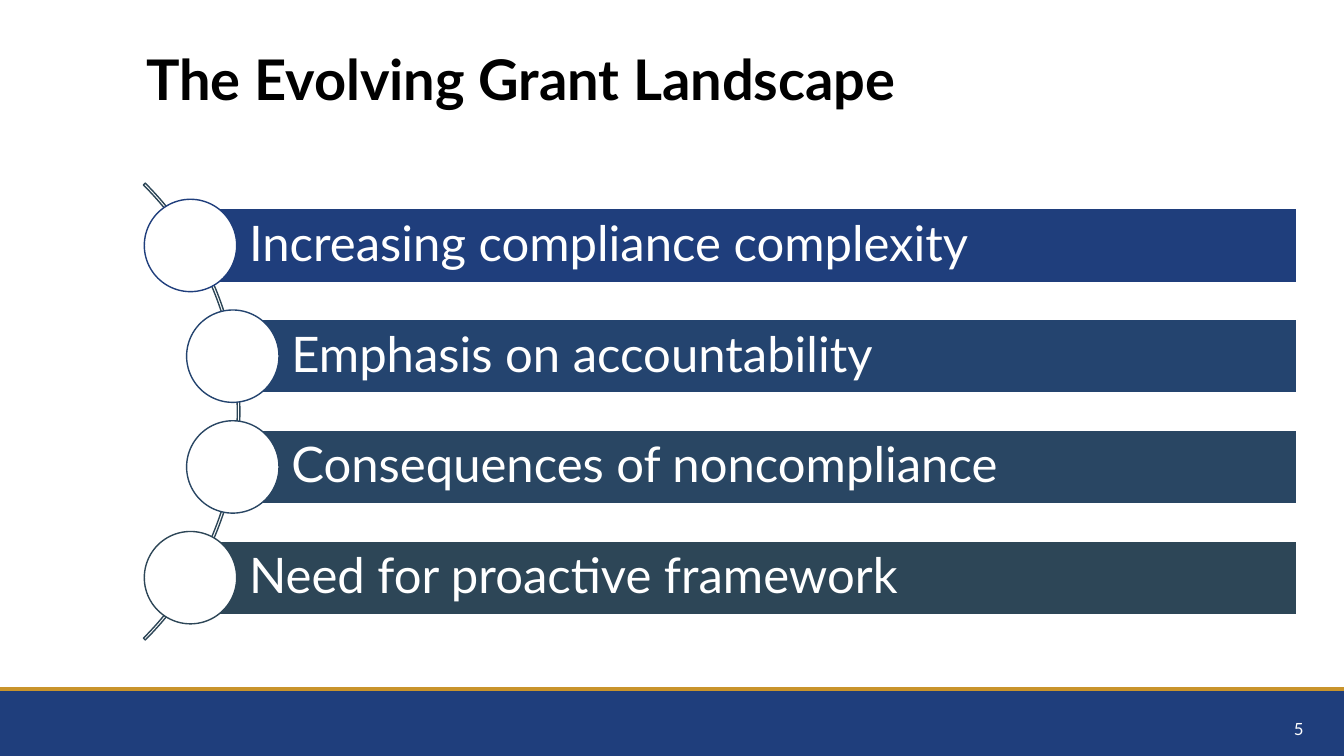
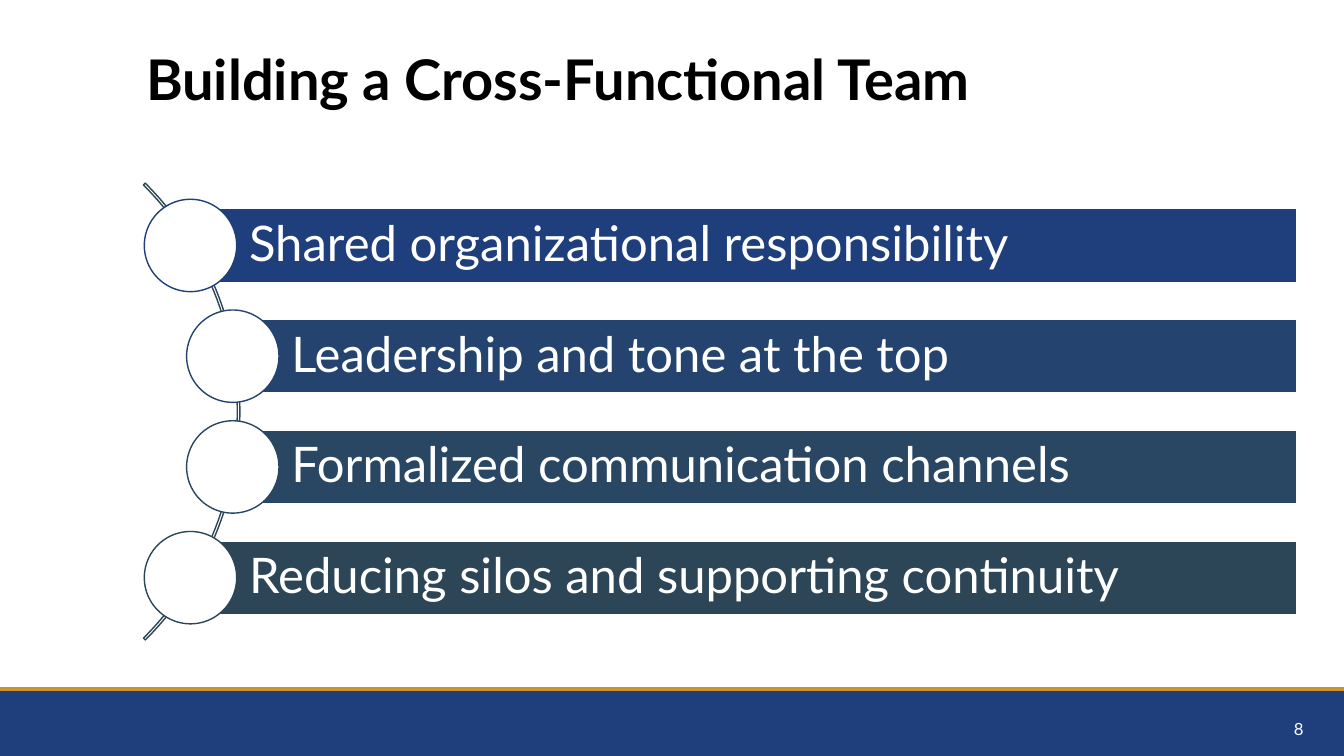
"""Build two grant slides, each a curved list of four bars."""
from lxml import etree
from pptx import Presentation
from pptx.dml.color import RGBColor
from pptx.enum.shapes import MSO_CONNECTOR, MSO_SHAPE
from pptx.enum.text import MSO_ANCHOR, MSO_AUTO_SIZE, PP_ALIGN
from pptx.oxml.ns import qn
from pptx.util import Pt

RECT, OVAL, ARC = MSO_SHAPE.RECTANGLE, MSO_SHAPE.OVAL, MSO_SHAPE.BLOCK_ARC
LINE = MSO_CONNECTOR.STRAIGHT
MIDDLE = MSO_ANCHOR.MIDDLE
NO_FIT = MSO_AUTO_SIZE.NONE
LEFT, RIGHT = PP_ALIGN.LEFT, PP_ALIGN.RIGHT

SLIDES = [
    ("The Evolving Grant Landscape", "5", [
        "Increasing compliance complexity",
        "Emphasis on accountability",
        "Consequences of noncompliance",
        "Need for proactive framework",
    ]),
    ("Building a Cross-Functional Team", "8", [
        "Shared organizational responsibility",
        "Leadership and tone at the top",
        "Formalized communication channels",
        "Reducing silos and supporting continuity",
    ]),
]

FONT = "Lato"
BLACK = RGBColor(0x00, 0x00, 0x00)
WHITE = RGBColor(0xFF, 0xFF, 0xFF)
NAVY = RGBColor(0x1F, 0x3E, 0x7C)
GOLD = RGBColor(0xC9, 0x94, 0x2B)
SLATE = RGBColor(0x2D, 0x46, 0x57)
TONES = [NAVY, RGBColor(0x24, 0x44, 0x6F), RGBColor(0x29, 0x46, 0x63), SLATE]

WIDE, HIGH = 960, 540
BAND_Y = 492
MID_Y = 294
PITCH = 79.1
BAR_H = 52.6
BAR_END = 926.5
BAR_X = [136.1, 166.3, 166.3, 136.1]
DOT = 66
ARC_X, ARC_D, ARC_W = -59.4, 461.5, 1.85


def add_shape(slide, kind, x, y, w, h, fill, edge):
    shape = slide.shapes.add_shape(kind, Pt(x), Pt(y), Pt(w), Pt(h))
    shape.shadow.inherit = False
    if fill is None:
        shape.fill.background()
    else:
        shape.fill.solid()
        shape.fill.fore_color.rgb = fill
    if edge is None:
        shape.line.fill.background()
    else:
        shape.line.color.rgb = edge
        shape.line.width = Pt(1)
    return shape


def set_text(shape, text, size, color, align=LEFT, bold=False, space=0.9):
    frame = shape.text_frame
    frame.text = text
    frame.word_wrap = True
    frame.auto_size = NO_FIT
    frame.vertical_anchor = MIDDLE
    para = frame.paragraphs[0]
    para.alignment = align
    para.line_spacing = space
    font = para.font
    font.name, font.size, font.bold = FONT, Pt(size), bold
    font.color.rgb = color
    return frame


def set_title(slide, text):
    title = slide.shapes.title
    title.left, title.top = Pt(97.2), Pt(29.5)
    title.width, title.height = Pt(841), Pt(58.3)
    set_text(title, text, 40, BLACK, bold=True)


def add_list(slide, items):
    arc = add_shape(slide, ARC, ARC_X - ARC_D / 2, MID_Y - ARC_D / 2,
                    ARC_D, ARC_D, None, SLATE)
    arc.adjustments[0] = 189
    arc.adjustments[1] = 27
    arc.adjustments[2] = ARC_W / ARC_D
    for i, (text, x, tone) in enumerate(zip(items, BAR_X, TONES)):
        y = MID_Y + (i - (len(items) - 1) / 2) * PITCH
        bar = add_shape(slide, RECT, x, y - BAR_H / 2, BAR_END - x, BAR_H,
                        tone, WHITE)
        frame = set_text(bar, text, 35, WHITE)
        frame.margin_left = Pt(41.8)
        frame.margin_top = frame.margin_bottom = Pt(7.2)
        add_shape(slide, OVAL, x - DOT / 2, y - DOT / 2, DOT, DOT,
                  WHITE, tone)


def add_number(slide, text):
    box = slide.shapes.add_textbox(Pt(722.2), Pt(506.2), Pt(216), Pt(28.8))
    set_text(box, text, 12, WHITE, RIGHT, space=1.0)


def add_band(slide):
    band = add_shape(slide, RECT, 0, BAND_Y, WIDE, HIGH - BAND_Y, NAVY, None)
    rule = slide.shapes.add_connector(LINE, 0, Pt(BAND_Y), Pt(WIDE), Pt(BAND_Y))
    rule.line.color.rgb = GOLD
    rule.line.width = Pt(3)
    etree.SubElement(rule.element.spPr, qn("a:effectLst"))
    tree = slide.slide_layout.shapes.element
    for part in (band, rule):
        tree.append(part.element)


def main():
    deck = Presentation()
    deck.slide_width, deck.slide_height = Pt(WIDE), Pt(HIGH)
    layout = deck.slide_layouts[5]
    for title, number, items in SLIDES:
        slide = deck.slides.add_slide(layout)
        set_title(slide, title)
        add_list(slide, items)
        add_number(slide, number)
    add_band(slide)
    deck.save("out.pptx")


if __name__ == "__main__":
    main()
